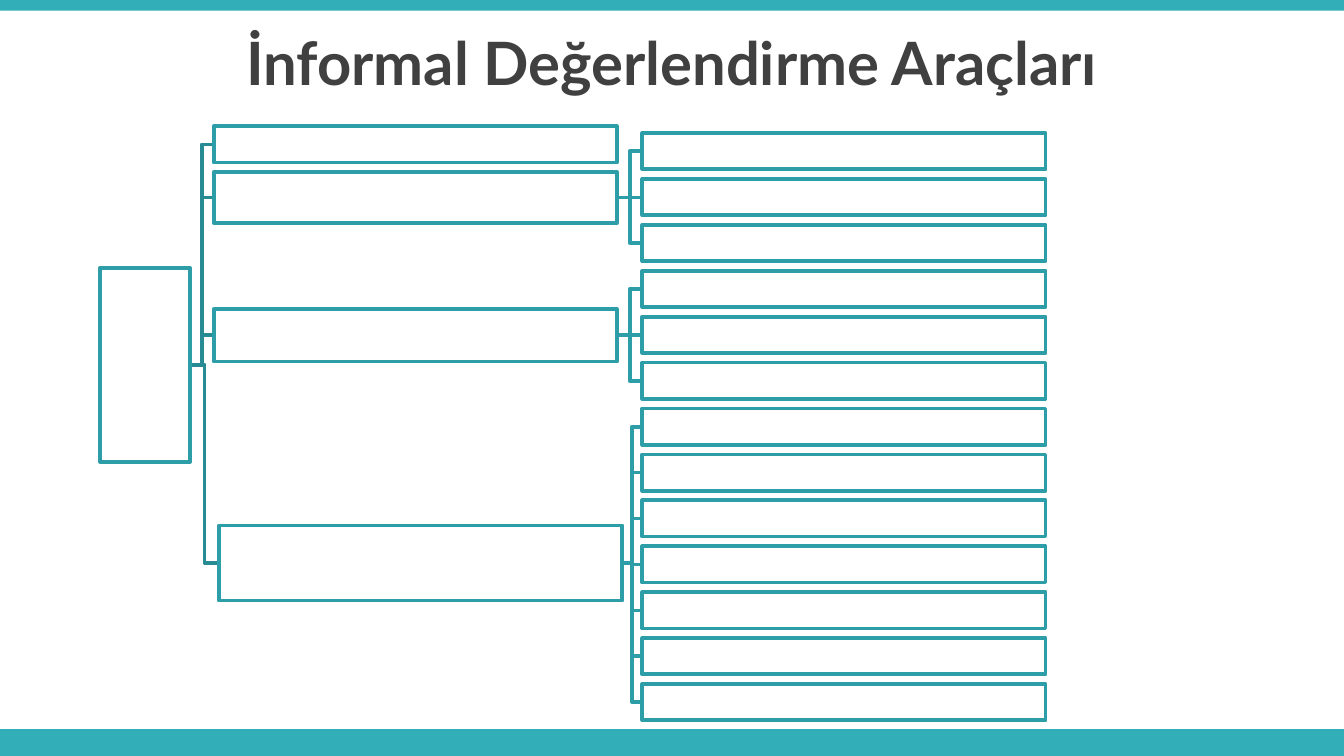
from dataclasses import dataclass

import pptx
import pptx.dml.color
import pptx.enum.shapes
import pptx.enum.text
import pptx.oxml
import pptx.oxml.ns
import pptx.util
from pptx.util import Inches

TEAL = "32AEB8"
OUTLINE = "2D9EA7"
TRUNK = "288B93"
WHITE = "FFFFFF"
GREY = "404040"

SLIDE_WIDTH = 10
SLIDE_HEIGHT = SLIDE_WIDTH * 9 / 16
FOOTER_HEIGHT = 0.2
BOX_WIDTH = 3
LEAF_LEFT = 4.78
LEAF_TOP = 0.99
LEAF_HEIGHT = 0.27
LEAF_COUNT = 13
LEAF_PITCH = (5.09 - LEAF_TOP) / (LEAF_COUNT - 1)


@dataclass
class Box:
    left: float
    top: float
    width: float
    height: float
    rotation: int = 0

    @property
    def right(self) -> float:
        return self.left + self.width

    @property
    def middle(self) -> float:
        return self.top + self.height / 2


@dataclass
class Branch:
    box: Box
    leaves: list[Box]


def rgb(color: str) -> pptx.dml.color.RGBColor:
    return pptx.dml.color.RGBColor.from_string(color)


def write(shape, text: str, *, font: str, size: float, color: str, bold: bool = False) -> None:
    frame = shape.text_frame
    frame.word_wrap = True
    frame.vertical_anchor = pptx.enum.text.MSO_ANCHOR.MIDDLE
    paragraph = frame.paragraphs[0]
    paragraph.alignment = pptx.enum.text.PP_ALIGN.CENTER
    run = paragraph.add_run()
    run.text = text
    run.font.name = font
    run.font.size = pptx.util.Pt(size)
    run.font.bold = bold
    run.font.color.rgb = rgb(color)


def draw_line(shape, color: str) -> None:
    shape.line.color.rgb = rgb(color)
    shape.line.width = pptx.util.Pt(2)


def draw_box(slide, box: Box, fill: str, outline: str | None = None) -> None:
    shape = slide.shapes.add_shape(
        pptx.enum.shapes.MSO_SHAPE.RECTANGLE,
        Inches(box.left), Inches(box.top), Inches(box.width), Inches(box.height),
    )
    shape.rotation = box.rotation
    shape.shadow.inherit = False
    shape.fill.solid()
    shape.fill.fore_color.rgb = rgb(fill)
    if outline:
        draw_line(shape, outline)
    else:
        shape.line.fill.background()


def draw_link(slide, start_x: float, start_y: float, child: Box, color: str) -> None:
    end_x, end_y = child.left, child.middle
    if round(end_y - start_y, 2) == 0:
        link = slide.shapes.add_connector(
            pptx.enum.shapes.MSO_CONNECTOR.STRAIGHT,
            Inches(start_x), Inches(start_y), Inches(end_x), Inches(start_y),
        )
        properties = link._element.find(pptx.oxml.ns.qn("p:spPr"))
        draw_line(link, color)
        properties.append(pptx.oxml.parse_xml(f"<a:effectLst {pptx.oxml.ns.nsdecls('a')}/>"))
        return
    bend_x = (start_x + end_x) / 2
    builder = slide.shapes.build_freeform(Inches(start_x), Inches(start_y))
    corners = [(bend_x, start_y), (bend_x, end_y), (end_x, end_y)]
    builder.add_line_segments([(Inches(x), Inches(y)) for x, y in corners], close=False)
    link = builder.convert_to_shape()
    link.shadow.inherit = False
    link.fill.background()
    draw_line(link, color)


def main() -> None:
    presentation = pptx.Presentation()
    presentation.slide_width = Inches(SLIDE_WIDTH)
    presentation.slide_height = Inches(SLIDE_HEIGHT)
    slide = presentation.slides.add_slide(presentation.slide_layouts[5])

    draw_box(slide, Box(0, SLIDE_HEIGHT - FOOTER_HEIGHT, SLIDE_WIDTH, FOOTER_HEIGHT), TEAL)
    draw_box(slide, Box(0, 0, SLIDE_WIDTH, 0.08), TEAL)

    title = slide.shapes.title
    title.left, title.top = Inches(0), Inches(0.14)
    title.width, title.height = Inches(SLIDE_WIDTH), Inches(0.63)
    write(title, "İnformal Değerlendirme Araçları", font="Lato", size=32, color=GREY, bold=True)

    leaves = [
        Box(LEAF_LEFT, LEAF_TOP + row * LEAF_PITCH, BOX_WIDTH, LEAF_HEIGHT)
        for row in range(LEAF_COUNT)
    ]
    branches = [
        Branch(Box(1.59, 0.94, BOX_WIDTH, 0.27), []),
        Branch(Box(1.59, 1.28, BOX_WIDTH, 0.38), leaves[:3]),
        Branch(Box(1.59, 2.3, BOX_WIDTH, 0.39), leaves[3:6]),
        Branch(Box(1.63, 3.91, BOX_WIDTH, 0.56), leaves[6:]),
    ]
    root = Box(0.36, 2.38, 1.44, 0.67, rotation=270)
    root_right = root.left + (root.width + root.height) / 2

    for branch in branches:
        draw_link(slide, root_right, root.middle, branch.box, TRUNK)
        for leaf in branch.leaves:
            draw_link(slide, branch.box.right, branch.box.middle, leaf, OUTLINE)
    for box in [root, *(branch.box for branch in branches), *leaves]:
        draw_box(slide, box, WHITE, OUTLINE)

    presentation.save("out.pptx")


if __name__ == "__main__":
    main()
